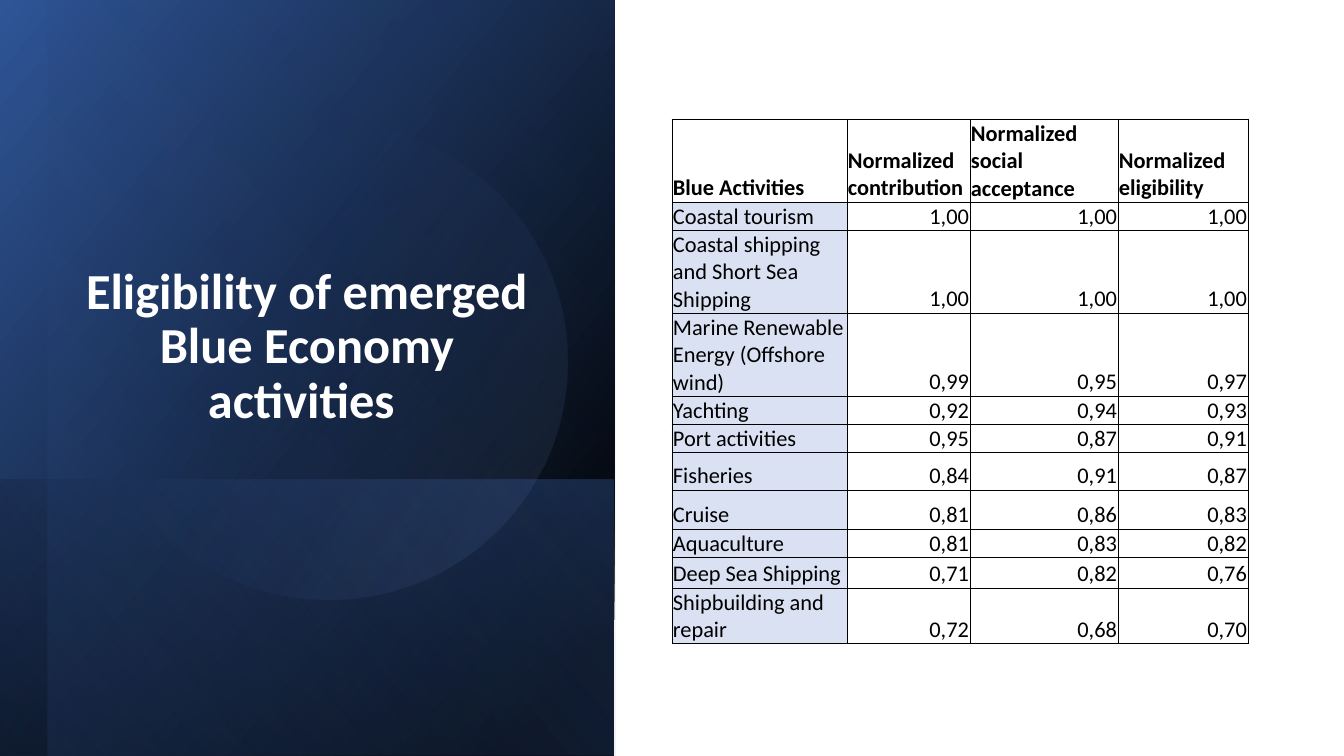
from lxml.etree import SubElement
from pptx import Presentation
from pptx.dml.color import RGBColor
from pptx.enum.shapes import MSO_SHAPE
from pptx.enum.text import MSO_ANCHOR, PP_ALIGN
from pptx.oxml.ns import qn
from pptx.util import Emu, Pt

PX_PER_INCH = 100.8
BLACK, WHITE, NAVY, BLUE, SKY, PALE = "000000", "FFFFFF", "2F5597", "4472C4", "8FAADC", "D9E1F2"


def px(length):
    return Emu(round(length * 914400 / PX_PER_INCH))


def color(code):
    return RGBColor.from_string(code)


class SlideBuilder:
    """Holds the text style and the current slide, and draws elements on it."""

    def __init__(self, page, font="Calibri"):
        self.page = page
        self.font = font

    def add_text(self, frame, text, size, code, bold=False, align=PP_ALIGN.LEFT, spacing=1.0):
        para = frame.paragraphs[0]
        para.alignment = align
        para.line_spacing = spacing
        span = para.add_run()
        span.text = text
        span.font.name = self.font
        span.font.size = Pt(size)
        span.font.bold = bold
        span.font.color.rgb = color(code)

    def gradient_shape(self, kind, place, rotation, stops, angle, flip=False):
        shape = self.page.shapes.add_shape(kind, *map(px, place))
        shape.shadow.inherit = False
        shape.rotation = rotation
        shape.line.fill.background()
        properties = shape._element.spPr
        if flip:
            properties.find(qn("a:xfrm")).set("flipH", "1")
        shape.fill.gradient()
        shape.fill.gradient_angle = 360 - angle
        stop_list = properties.find(qn("a:gradFill")).find(qn("a:gsLst"))
        for default_stop in list(stop_list):
            stop_list.remove(default_stop)
        for position, code, opacity in stops:
            stop = SubElement(stop_list, qn("a:gs"), pos=str(position * 1000))
            tint = SubElement(stop, qn("a:srgbClr"), val=code)
            SubElement(tint, qn("a:alpha"), val=str(opacity * 1000))

    def title(self, place, text):
        box = self.page.shapes.add_textbox(*map(px, place))
        frame = box.text_frame
        frame.word_wrap = True
        frame.vertical_anchor = MSO_ANCHOR.BOTTOM
        self.add_text(frame, text, 36, WHITE, True, PP_ALIGN.CENTER, 0.9)

    def borders(self, cell, code, width):
        properties = cell._tc.get_or_add_tcPr()
        for index, side in enumerate(("a:lnL", "a:lnR", "a:lnT", "a:lnB")):
            line = SubElement(properties, qn(side), w=str(Pt(width)))
            fill = SubElement(line, qn("a:solidFill"))
            SubElement(fill, qn("a:srgbClr"), val=code)
            properties.insert(index, line)

    def table(self, left, top, widths, heights, rows):
        place = (left, top, sum(widths), sum(heights))
        table = self.page.shapes.add_table(len(rows), len(widths), *map(px, place)).table
        table.first_row = table.horz_banding = False
        for column, width in zip(table.columns, widths):
            column.width = px(width)
        for row, height in zip(table.rows, heights):
            row.height = px(height)
        for row_index, values in enumerate(rows):
            for column_index, value in enumerate(values):
                header, label = row_index == 0, column_index == 0
                cell = table.cell(row_index, column_index)
                cell.vertical_anchor = MSO_ANCHOR.BOTTOM
                cell.margin_left = cell.margin_right = cell.margin_top = px(1)
                cell.margin_bottom = 0
                if label and not header:
                    cell.fill.solid()
                    cell.fill.fore_color.rgb = color(PALE)
                else:
                    cell.fill.background()
                self.borders(cell, BLACK, 0.5)
                align = PP_ALIGN.LEFT if header or label else PP_ALIGN.RIGHT
                self.add_text(cell.text_frame, value, 16, BLACK, header, align)


ACTIVITIES = [
    ("Blue Activities", "Normalized contribution", "Normalized social acceptance", "Normalized eligibility"),
    ("Coastal tourism", "1,00", "1,00", "1,00"),
    ("Coastal shipping and Short Sea Shipping", "1,00", "1,00", "1,00"),
    ("Marine Renewable Energy (Offshore wind)", "0,99", "0,95", "0,97"),
    ("Yachting", "0,92", "0,94", "0,93"),
    ("Port activities", "0,95", "0,87", "0,91"),
    ("Fisheries", "0,84", "0,91", "0,87"),
    ("Cruise", "0,81", "0,86", "0,83"),
    ("Aquaculture", "0,81", "0,83", "0,82"),
    ("Deep Sea Shipping", "0,71", "0,82", "0,76"),
    ("Shipbuilding and repair", "0,72", "0,68", "0,70"),
]
PANELS = [
    ((-71, 71, 756, 615), [(8, BLACK, 100), (100, NAVY, 100)], 50),
    ((168, 310, 276, 615), [(2, BLUE, 29), (100, BLACK, 30)], 130),
    ((-46, 94, 756, 568), [(0, BLACK, 0), (99, BLUE, 11)], 130),
]


def main():
    deck = Presentation()
    deck.slide_width, deck.slide_height = px(1344), px(756)
    builder = SlideBuilder(deck.slides.add_slide(deck.slide_layouts[6]))
    for place, stops, angle in PANELS:
        builder.gradient_shape(MSO_SHAPE.RECTANGLE, place, 90, stops, angle, flip=True)
    glow = [(39, BLUE, 0), (100, SKY, 15)]
    builder.gradient_shape(MSO_SHAPE.OVAL, (91, 124, 476, 476), 101.6, glow, 290)
    builder.title((76, 291, 462, 143), "Eligibility of emerged Blue Economy activities ")
    heights = [83, 28, 83, 83, 28, 28, 38, 39, 28, 31, 56]
    builder.table(672, 119, [175, 123, 148, 130], heights, ACTIVITIES)
    deck.save("out.pptx")


if __name__ == "__main__":
    main()
